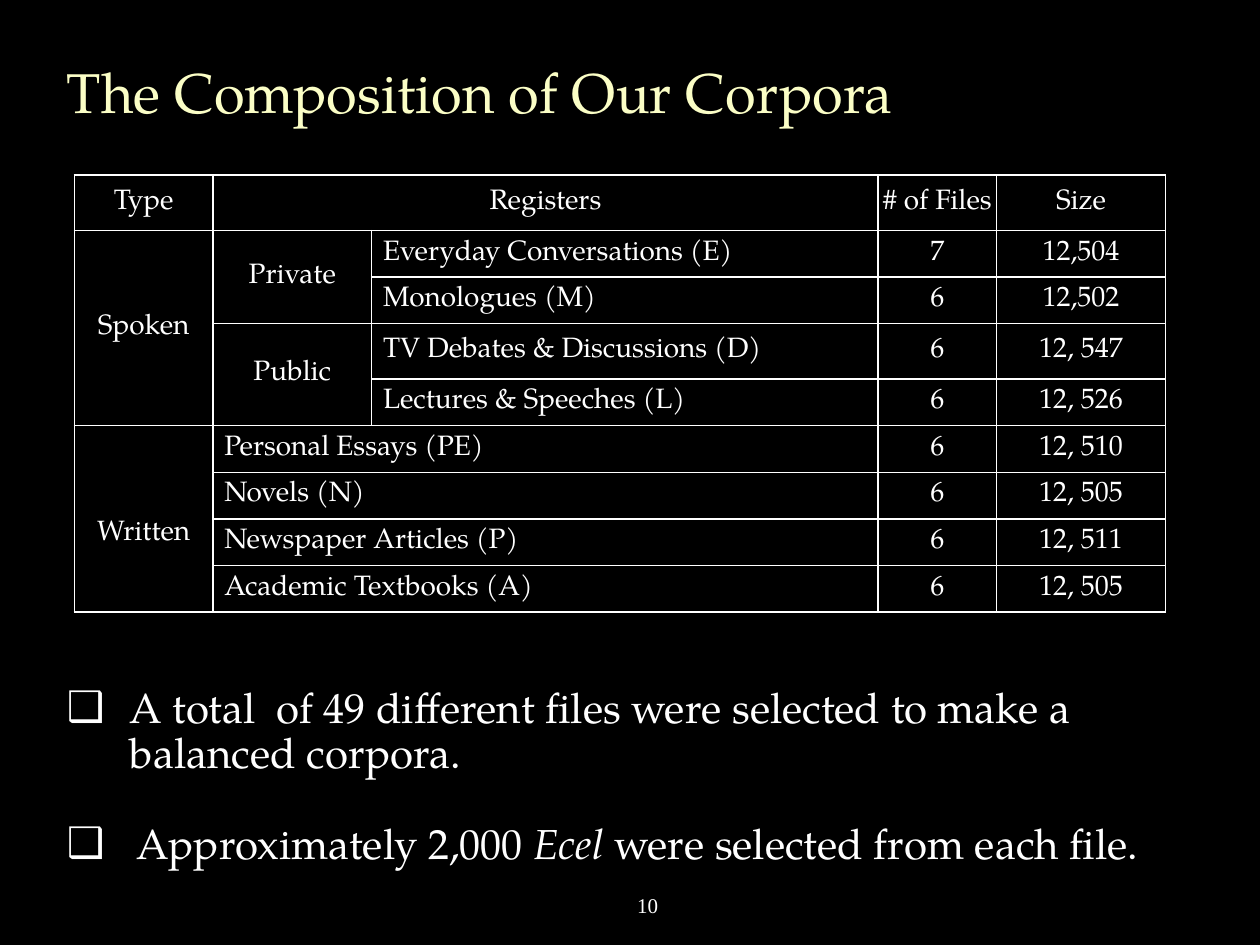
from lxml.etree import SubElement, fromstring
from pptx import Presentation
from pptx.dml.color import RGBColor
from pptx.enum.text import MSO_ANCHOR as Anchor, MSO_AUTO_SIZE as AutoSize, PP_ALIGN as Align
from pptx.oxml.ns import nsdecls, qn
from pptx.util import Inches, Pt

WIDTH, HEIGHT = Inches(10), Inches(7.5)
BLACK, WHITE, CREAM = "000000", "FFFFFF", "FBFEC6"
SERIF, NUMBER_FONT = "TeX Gyre Pagella", "Times New Roman"

COLUMN_WIDTHS = [1.1, 1.26, 4.02, 0.94, 1.34]
HEADER_HEIGHT, ROW_HEIGHT = 0.44, 0.37
TALL_ROWS = {0, 3}
ROWS = [
    ("Type", "Registers", "", "# of Files", "Size"),
    ("Spoken", "Private", "Everyday Conversations (E)", "7", "12,504"),
    ("", "", "Monologues (M)", "6", "12,502"),
    ("", "Public", "TV Debates & Discussions (D)", "6", "12, 547"),
    ("", "", "Lectures & Speeches (L)", "6", "12, 526"),
    ("Written", "Personal Essays (PE)", "", "6", "12, 510"),
    ("", "Novels (N)", "", "6", "12, 505"),
    ("", "Newspaper Articles (P)", "", "6", "12, 511"),
    ("", "Academic Textbooks (A)", "", "6", "12, 505"),
]
ROW_MERGES = [(1, 0, 4, 0), (5, 0, 8, 0), (1, 1, 2, 1), (3, 1, 4, 1)]
COLUMN_MERGES = [(row, 1, row, 2) for row in (0, 5, 6, 7, 8)]
POINTS = [
    (0.5, 0, [("A total  of 49 different files were selected to make a balanced corpora.", False)]),
    (0.55, 26, [("Approximately 2,000 ", False), ("Ecel", True),
                (" were selected from each file.", False)]),
]


def color(value):
    """Turn a hex string into a colour."""
    return RGBColor.from_string(value)


def apply(target, **values):
    """Set every given attribute on the target."""
    for name, value in values.items():
        setattr(target, name, value)


def share(left, top, width, height):
    """Turn percentages of the slide into a position and size."""
    return dict(left=int(WIDTH * left / 100), top=int(HEIGHT * top / 100),
                width=int(WIDTH * width / 100), height=int(HEIGHT * height / 100))


def add_run(paragraph, text, size, fill=WHITE, font=SERIF, italic=False):
    """Add one formatted run to a paragraph."""
    run = paragraph.add_run()
    run.text = text
    apply(run.font, name=font, size=Pt(size), italic=italic, bold=False)
    run.font.color.rgb = color(fill)


def add_line(shape, text, align, size, **look):
    """Write a single vertically centred line in a shape."""
    apply(shape.text_frame, word_wrap=True, vertical_anchor=Anchor.MIDDLE)
    paragraph = shape.text_frame.paragraphs[0]
    paragraph.alignment = align
    add_run(paragraph, text, size, **look)


def add_bullet(paragraph, indent):
    """Give a paragraph a box bullet with a hanging indent."""
    properties = paragraph._p.get_or_add_pPr()
    properties.set("marL", str(Inches(indent)))
    properties.set("indent", str(-Inches(indent)))
    SubElement(properties, qn("a:buChar")).set("char", "❑")


def add_points(body):
    """Fill the body placeholder with the bulleted points."""
    frame = body.text_frame
    apply(frame, word_wrap=True, auto_size=AutoSize.SHAPE_TO_FIT_TEXT,
          vertical_anchor=Anchor.TOP)
    for index, (indent, gap, runs) in enumerate(POINTS):
        paragraph = frame.add_paragraph() if index else frame.paragraphs[0]
        apply(paragraph, line_spacing=0.9, space_before=Pt(gap), space_after=Pt(0))
        add_bullet(paragraph, indent)
        for text, italic in runs:
            add_run(paragraph, text, 24, italic=italic)


def add_borders(cell):
    """Draw a thin white line on all four sides of a cell."""
    properties = cell._tc.get_or_add_tcPr()
    for index, side in enumerate(("lnL", "lnR", "lnT", "lnB")):
        properties.insert(index, fromstring(
            f'<a:{side} {nsdecls("a")} w="{Pt(1)}"><a:solidFill>'
            f'<a:srgbClr val="{WHITE}"/></a:solidFill></a:{side}>'))


def format_cell(cell, text):
    """Style one cell, with register names set to the left."""
    is_register = text.endswith(")")
    apply(cell, margin_left=Inches(0.09 if is_register else 0.03),
          margin_right=Inches(0.03), margin_bottom=0,
          margin_top=Inches(0.25 if text == "Written" else 0),
          vertical_anchor=Anchor.MIDDLE)
    cell.fill.background()
    add_borders(cell)
    paragraph = cell.text_frame.paragraphs[0]
    apply(paragraph, alignment=Align.LEFT if is_register else Align.CENTER)
    paragraph.font.size = Pt(16)
    if text:
        add_run(paragraph, text, 16)


def add_corpora_table(slide):
    """Add the table of registers, files and sizes."""
    table = slide.shapes.add_table(len(ROWS), len(COLUMN_WIDTHS),
                                   **share(5.9, 18.53, 86.6, 46.53)).table
    apply(table, first_row=False, horz_banding=False)
    for column, width in zip(table.columns, COLUMN_WIDTHS):
        column.width = Inches(width)
    for index, row in enumerate(table.rows):
        row.height = Inches(HEADER_HEIGHT if index in TALL_ROWS else ROW_HEIGHT)
        for cell, text in zip(row.cells, ROWS[index]):
            format_cell(cell, text)
    for top, left, bottom, right in ROW_MERGES + COLUMN_MERGES:
        table.cell(top, left).merge(table.cell(bottom, right))


def main():
    """Build the slide and save it."""
    presentation = Presentation()
    apply(presentation, slide_width=WIDTH, slide_height=HEIGHT)
    slide = presentation.slides.add_slide(presentation.slide_layouts[1])
    slide.background.fill.solid()
    slide.background.fill.fore_color.rgb = color(BLACK)

    title, body = slide.placeholders
    apply(title, **share(4.3, 3.87, 81.4, 11.6))
    add_line(title, "The Composition of Our Corpora", Align.LEFT, 32, fill=CREAM)
    add_corpora_table(slide)
    apply(body, **share(4.3, 72, 92.9, 20.8))
    add_points(body)
    number = slide.shapes.add_textbox(**share(45.3, 93.07, 12.2, 5.33))
    add_line(number, "10", Align.CENTER, 12, font=NUMBER_FONT)

    presentation.save("out.pptx")


if __name__ == "__main__":
    main()
